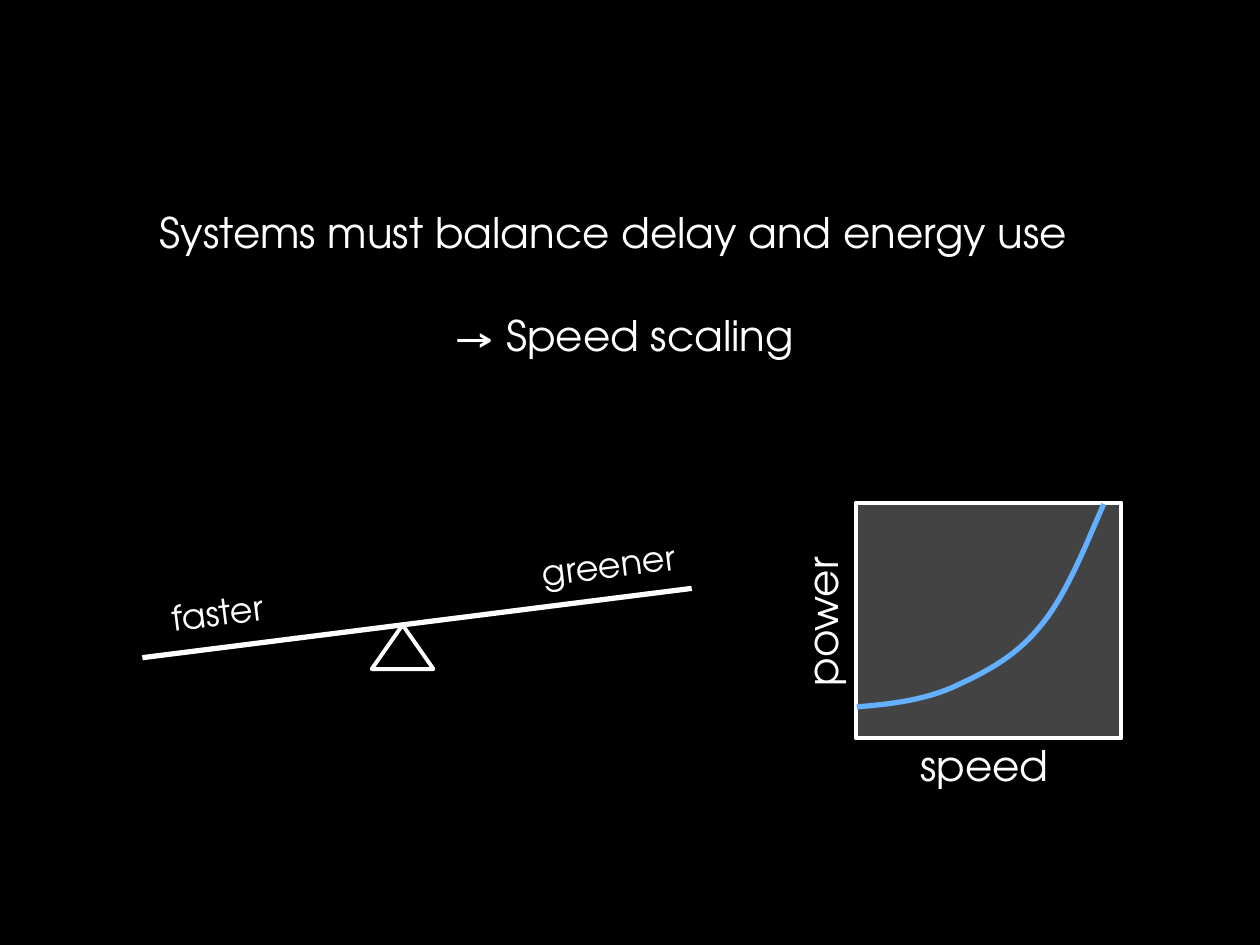
import pptx
import pptx.util
import pptx.dml.color
import pptx.enum.shapes
import pptx.enum.text
import pptx.oxml

Inches = pptx.util.Inches
Shape = pptx.enum.shapes.MSO_SHAPE
Align = pptx.enum.text.PP_ALIGN

COLORS = {"back": "000000", "ink": "FFFFFF", "plot": "434343", "curve": "62B0FF"}


def paint(name):
    return pptx.dml.color.RGBColor.from_string(COLORS[name])


def write(frame, text, size=24, font="TeX Gyre Adventor", color="ink", align=Align.CENTER):
    par = frame.paragraphs[0]
    par.alignment = align
    run = par.add_run()
    run.text = text
    run.font.size = pptx.util.Pt(size)
    run.font.name = font
    run.font.color.rgb = paint(color)


def bezier(start, parts, steps=16):
    points = [start]
    for first, second, end in parts:
        for step in range(1, steps + 1):
            t = step / steps
            u = 1 - t
            points.append(tuple(
                u**3 * a + 3 * u * u * t * b + 3 * u * t * t * c + t**3 * d
                for a, b, c, d in zip(start, first, second, end)))
        start = end
    return points


class Pen:
    def __init__(self, slide):
        self.slide = slide
        self.shapes = slide.shapes
        fill = slide.background.fill
        fill.solid()
        fill.fore_color.rgb = paint("back")

    def group(self):
        self.shapes = self.slide.shapes.add_group_shape().shapes

    def leave(self):
        self.shapes = self.slide.shapes

    def stroke(self, item, color, width):
        item.line.color.rgb = paint(color)
        item.line.width = pptx.util.Pt(width)

    def shape(self, kind, x, y, w, h, fill=None, color="ink", width=2.25):
        item = self.shapes.add_shape(kind, Inches(x), Inches(y), Inches(w), Inches(h))
        self.finish(item, fill, color, width)

    def finish(self, item, fill, color, width):
        item.shadow.inherit = False
        if fill:
            item.fill.solid()
            item.fill.fore_color.rgb = paint(fill)
        else:
            item.fill.background()
        self.stroke(item, color, width)

    def curve(self, points, color="curve", width=3):
        spots = [(Inches(x), Inches(y)) for x, y in points]
        path = self.shapes.build_freeform(*spots[0])
        path.add_line_segments(spots[1:], close=False)
        self.finish(path.convert_to_shape(), None, color, width)

    def line(self, x1, y1, x2, y2, color="ink", width=3):
        item = self.shapes.add_connector(
            pptx.enum.shapes.MSO_CONNECTOR.STRAIGHT,
            Inches(x1), Inches(y1), Inches(x2), Inches(y2))
        self.stroke(item, color, width)
        item._element.spPr.append(pptx.oxml.parse_xml(
            '<a:effectLst xmlns:a="http://schemas.openxmlformats.org/drawingml/2006/main"/>'))

    def text(self, text, x, y, w, h, turn=0, **style):
        box = self.shapes.add_textbox(Inches(x), Inches(y), Inches(w), Inches(h))
        box.rotation = turn
        box.text_frame.word_wrap = False
        box.text_frame.auto_size = pptx.enum.text.MSO_AUTO_SIZE.SHAPE_TO_FIT_TEXT
        write(box.text_frame, text, **style)


def main():
    deck = pptx.Presentation()
    deck.slide_width, deck.slide_height = Inches(10), Inches(7.5)
    pen = Pen(deck.slides.add_slide(deck.slide_layouts[6]))

    pen.group()
    pen.shape(Shape.RECTANGLE, 6.79, 3.99, 2.11, 1.87, fill="plot")
    pen.curve(bezier((6.8, 5.61), [
        ((7.06, 5.59), (7.31, 5.56), (7.55, 5.46)),
        ((7.79, 5.35), (8.04, 5.23), (8.24, 4.99)),
        ((8.45, 4.75), (8.6, 4.37), (8.76, 4)),
    ]))
    pen.text("speed", 7.2, 5.82, 1.23, 0.51)
    pen.text("power", 5.9, 4.68, 1.25, 0.51, turn=270)

    pen.group()
    pen.shape(Shape.ISOSCELES_TRIANGLE, 2.95, 4.96, 0.49, 0.35)
    pen.line(1.13, 5.22, 5.49, 4.67)
    pen.text("greener", 4.2, 4.26, 1.28, 0.44, turn=353, size=20, align=Align.LEFT)
    pen.text("faster", 1.25, 4.64, 0.95, 0.44, turn=353, size=20)

    pen.leave()
    pen.text("Systems must balance delay and energy use", 1.17, 1.59, 7.58, 0.5, align=Align.LEFT)
    pen.text("→ Speed scaling", 3.49, 2.41, 2.93, 0.5)

    deck.save("out.pptx")


if __name__ == "__main__":
    main()
